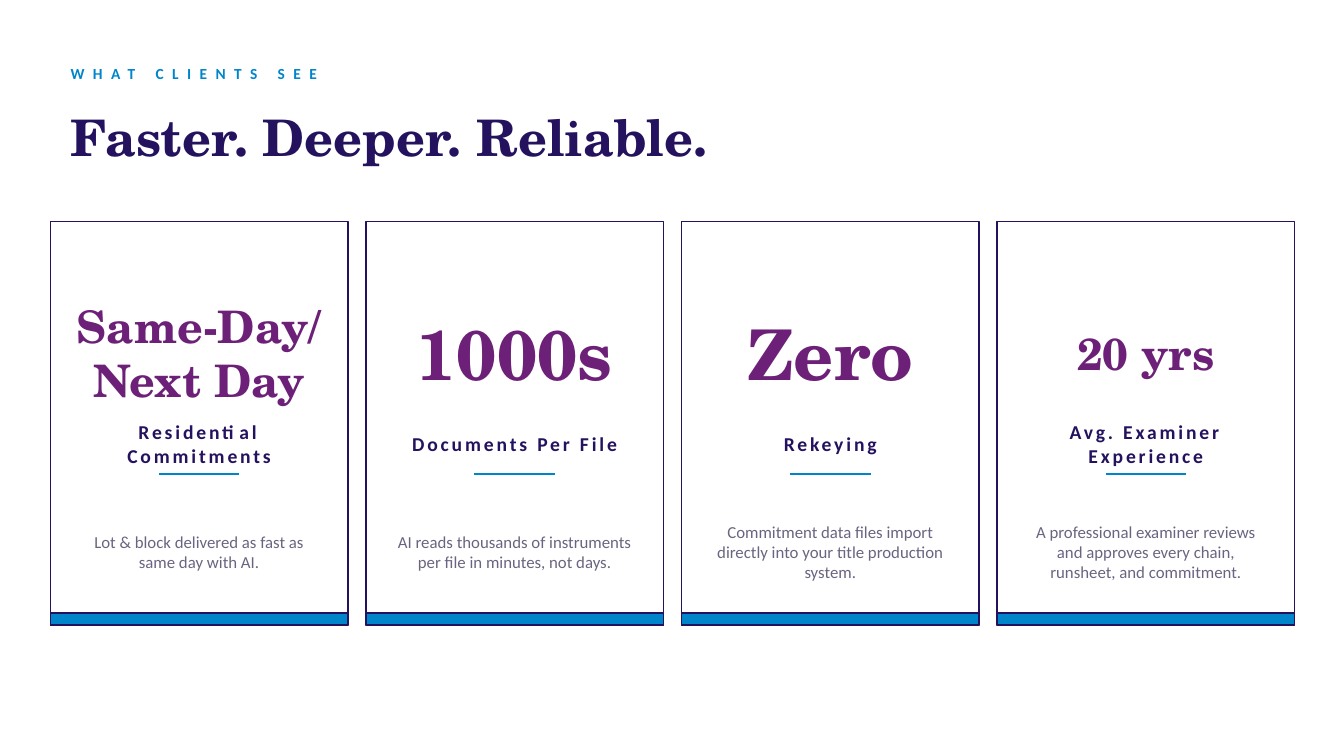
"""Build the client results slide with four headline cards."""
from dataclasses import dataclass

from lxml import etree
from pptx import Presentation
from pptx.dml.color import RGBColor
from pptx.enum.shapes import MSO_CONNECTOR, MSO_SHAPE
from pptx.enum.text import MSO_ANCHOR, MSO_AUTO_SIZE, PP_ALIGN
from pptx.oxml.ns import qn
from pptx.shapes.base import BaseShape
from pptx.slide import Slide
from pptx.util import Inches, Pt

STRAIGHT = MSO_CONNECTOR.STRAIGHT
RECTANGLE = MSO_SHAPE.RECTANGLE
MIDDLE = MSO_ANCHOR.MIDDLE
NO_AUTOFIT = MSO_AUTO_SIZE.NONE
LEFT, CENTER = PP_ALIGN.LEFT, PP_ALIGN.CENTER

COLORS = {
    "white": "FFFFFF",
    "navy": "24125F",
    "blue": "0085CA",
    "purple": "6D2077",
    "gray": "6B6480",
}
SERIF, SANS = "TeX Gyre Schola", "Calibri"
TITLE_ONLY_LAYOUT = 5
CARD_LEFT, CARD_TOP, CARD_WIDTH, CARD_HEIGHT = 0.5, 2.2, 2.95, 4
CARD_PITCH = 3.13
BAR_HEIGHT = 0.12
RULE_TOP, RULE_WIDTH = 4.7, 0.8


@dataclass(frozen=True)
class TextStyle:
    """Character and paragraph formatting for one text role."""

    font: str
    size: int
    color: str
    bold: bool = True
    spacing: int = 0
    align: PP_ALIGN = CENTER


@dataclass(frozen=True)
class Card:
    """Wording of one result card."""

    headline: str
    headline_size: int
    label: str
    detail: str


EYEBROW = TextStyle(SANS, 11, "blue", spacing=6, align=LEFT)
TITLE = TextStyle(SERIF, 36, "navy", align=LEFT)
LABEL = TextStyle(SANS, 14, "navy", spacing=2)
DETAIL = TextStyle(SANS, 12, "gray", bold=False)

CARDS = [
    Card("Same-Day/\nNext Day", 32, "Residential Commitments",
         "Lot & block delivered as fast as same day with AI."),
    Card("1000s", 50, "Documents Per File",
         "AI reads thousands of instruments per file in minutes, not days."),
    Card("Zero", 50, "Rekeying",
         "Commitment data files import directly into your title production system."),
    Card("20 yrs", 32, "Avg. Examiner Experience",
         "A professional examiner reviews and approves every chain, runsheet, and commitment."),
]


def color(name: str) -> RGBColor:
    """Return the named palette colour."""
    return RGBColor.from_string(COLORS[name])


def write_text(holder: BaseShape, text: str, style: TextStyle) -> None:
    """Fill a shape with styled, vertically centred text without insets."""
    frame = holder.text_frame
    frame.text = text
    frame.word_wrap = True
    frame.auto_size = NO_AUTOFIT
    frame.vertical_anchor = MIDDLE
    frame.margin_left = frame.margin_right = frame.margin_top = frame.margin_bottom = 0
    for paragraph in frame.paragraphs:
        paragraph.alignment = style.align
        paragraph.font.name = style.font
        paragraph.font.size = Pt(style.size)
        paragraph.font.bold = style.bold
        paragraph.font.color.rgb = color(style.color)
        if style.spacing:
            for run in paragraph.runs:
                run._r.get_or_add_rPr().set("spc", str(style.spacing * 100))


def add_text(slide: Slide, left: float, top: float, width: float, height: float,
             text: str, style: TextStyle) -> None:
    """Add a text box in the given style."""
    box = slide.shapes.add_textbox(Inches(left), Inches(top), Inches(width), Inches(height))
    write_text(box, text, style)


def add_panel(slide: Slide, left: float, top: float, height: float, fill: str) -> None:
    """Add a card-wide outlined rectangle."""
    panel = slide.shapes.add_shape(
        RECTANGLE, Inches(left), Inches(top), Inches(CARD_WIDTH), Inches(height))
    panel.shadow.inherit = False
    panel.fill.solid()
    panel.fill.fore_color.rgb = color(fill)
    panel.line.color.rgb = color("navy")
    panel.line.width = Pt(1)


def add_rule(slide: Slide, left: float) -> None:
    """Add the short line beneath a card label."""
    rule = slide.shapes.add_connector(
        STRAIGHT, Inches(left), Inches(RULE_TOP), Inches(left + RULE_WIDTH), Inches(RULE_TOP))
    rule.line.color.rgb = color("blue")
    rule.line.width = Pt(1.5)
    etree.SubElement(rule._element.spPr, qn("a:effectLst"))


def add_card(slide: Slide, left: float, card: Card) -> None:
    """Add a complete result card."""
    def add_card_text(inset: float, top: float, height: float,
                      text: str, style: TextStyle) -> None:
        """Add text inset equally from both card sides."""
        add_text(slide, left + inset, top, CARD_WIDTH - 2 * inset, height, text, style)

    add_panel(slide, left, CARD_TOP, CARD_HEIGHT, "white")
    add_panel(slide, left, CARD_TOP + CARD_HEIGHT - BAR_HEIGHT, BAR_HEIGHT, "blue")
    add_card_text(0.1, 2.75, 1.5, card.headline, TextStyle(SERIF, card.headline_size, "purple"))
    add_card_text(0.2, 4.15, 0.5, card.label, LABEL)
    add_rule(slide, left + (CARD_WIDTH - RULE_WIDTH) / 2)
    add_card_text(0.25, 4.9, 1.15, card.detail, DETAIL)


def main() -> None:
    """Build and save the presentation."""
    presentation = Presentation()
    presentation.slide_width, presentation.slide_height = Inches(13.33), Inches(7.5)
    slide = presentation.slides.add_slide(presentation.slide_layouts[TITLE_ONLY_LAYOUT])
    title = slide.shapes.title
    title.left, title.top = Inches(0.7), Inches(1)
    title.width, title.height = Inches(12), Inches(0.7)
    write_text(title, "Faster. Deeper. Reliable.", TITLE)
    add_text(slide, 0.7, 0.55, 12, 0.35, "WHAT CLIENTS SEE", EYEBROW)
    for index, card in enumerate(CARDS):
        add_card(slide, CARD_LEFT + index * CARD_PITCH, card)
    presentation.save("out.pptx")


if __name__ == "__main__":
    main()
